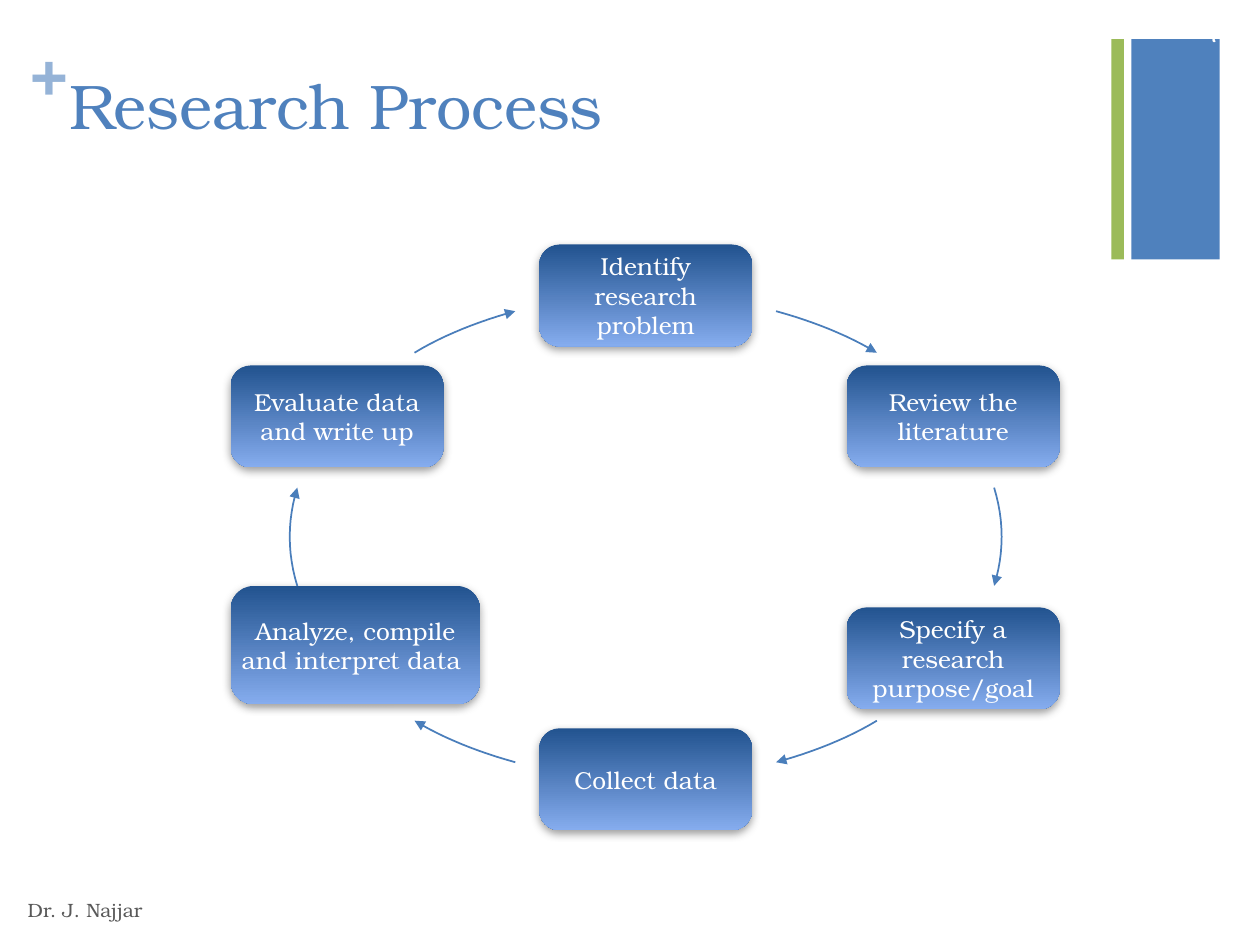
from lxml import etree
from pptx import Presentation
from pptx.dml.color import RGBColor
from pptx.enum import shapes, text
from pptx.oxml import ns
from pptx.util import Inches, Pt

COLORS = {"blue": "4F81BD", "light_blue": "95B3D7", "green": "9BBB59", "grey": "595959",
          "white": "FFFFFF", "box_top": "22538F", "box_bottom": "85ACEE",
          "arrow": "4A7EBB", "shadow": "808080"}
FONT = "TeX Gyre Bonum"
CENTER_X, CENTER_Y = 5.125, 4.26
CURVE_STEPS = 12


def rgb(name):
    return RGBColor.from_string(COLORS[name])


def write(shape, words, size, color, font=FONT, bold=False, align=text.PP_ALIGN.LEFT,
          anchor=text.MSO_ANCHOR.TOP, side_inset=0):
    frame = shape.text_frame
    frame.word_wrap = True
    frame.vertical_anchor = anchor
    frame.margin_left = frame.margin_right = Inches(side_inset)
    frame.margin_top = frame.margin_bottom = 0
    para = frame.paragraphs[0]
    para.alignment = align
    span = para.add_run()
    span.text = words
    span.font.name, span.font.size, span.font.bold = font, Pt(size), bold
    span.font.color.rgb = rgb(color)


deck = Presentation()
deck.slide_width, deck.slide_height = Inches(10), Inches(7.5)
page = deck.slides.add_slide(deck.slide_layouts[6])

# Corner bars
for left, width, color in [(8.98, 0.7, "blue"), (8.82, 0.1, "green")]:
    bar = page.shapes.add_shape(shapes.MSO_SHAPE.RECTANGLE, Inches(left), Inches(0.31),
                                Inches(width), Inches(1.75))
    bar.shadow.inherit = False
    bar.fill.solid()
    bar.fill.fore_color.rgb = rgb(color)
    bar.line.fill.background()

# Title, plus sign, author and page number
middle = text.MSO_ANCHOR.MIDDLE
labels = [
    ("+", (0.24, 0.25, 0.29, 0.58), dict(size=36, color="light_blue", bold=True)),
    ("Research Process", (0.55, 0.53, 8.26, 1.22), dict(size=36, color="blue")),
    ("Dr. J. Najjar", (0.22, 7.08, 6.7, 0.28), dict(size=11, color="grey", anchor=middle)),
    ("7", (9.08, 0.1, 0.61, 0.32), dict(size=14, color="white", font="Cambria",
                                        align=text.PP_ALIGN.RIGHT, anchor=middle)),
]
for words, place, style in labels:
    write(page.shapes.add_textbox(*map(Inches, place)), words, **style)

# Steps of the cycle, clockwise from the top
BOX = (1.69, 0.81)
steps = [
    ("Identify research problem", 4.28, 1.94, BOX),
    ("Review the literature", 6.72, 2.9, BOX),
    ("Specify a research purpose/goal", 6.72, 4.82, BOX),
    ("Collect data", 4.28, 5.78, BOX),
    ("Analyze, compile and interpret data ", 1.83, 4.65, (1.98, 0.94)),
    ("Evaluate data and write up", 1.83, 2.9, BOX),
]
# Cubic curves on the right side; the others are reflections of these
upper_curve = [(6.16, 2.47), (6.45, 2.55), (6.73, 2.66), (6.96, 2.8)]
side_curve = [(7.89, 3.87), (7.97, 4.13), (7.97, 4.39), (7.89, 4.65)]
# Curve, horizontal sign, vertical sign; a single reflection reverses direction
arrows = [(upper_curve, 1, 1), (side_curve, 1, 1), (upper_curve, 1, -1),
          (upper_curve, -1, -1), (side_curve, -1, -1), (upper_curve, -1, 1)]

for (words, left, top, size), (curve, sign_x, sign_y) in zip(steps, arrows):
    box = page.shapes.add_shape(shapes.MSO_SHAPE.ROUNDED_RECTANGLE, Inches(left), Inches(top),
                                *map(Inches, size))
    box.adjustments[0] = 0.2
    box.line.fill.background()
    box.fill.gradient()
    box.fill.gradient_angle = 270
    for stop, color, position in zip(box.fill.gradient_stops, ("box_top", "box_bottom"), (0, 1)):
        stop.color.rgb = rgb(color)
        stop.position = position
    box.shadow.inherit = False
    effects = box._element.spPr.find(ns.qn("a:effectLst"))
    shadow = etree.SubElement(effects, ns.qn("a:outerShdw"), blurRad=str(Pt(5)),
                              dist=str(Pt(2)), dir="5400000", rotWithShape="0")
    tint = etree.SubElement(shadow, ns.qn("a:srgbClr"), val=COLORS["shadow"])
    etree.SubElement(tint, ns.qn("a:alpha"), val="75000")
    write(box, words, 14, "white", align=text.PP_ALIGN.CENTER, anchor=middle, side_inset=0.02)

    points = [(CENTER_X + sign_x * (x - CENTER_X), CENTER_Y + sign_y * (y - CENTER_Y))
              for x, y in curve]
    if sign_x != sign_y:
        points.reverse()
    trace = []
    for step in range(CURVE_STEPS + 1):
        t = step / CURVE_STEPS
        weights = ((1 - t) ** 3, 3 * t * (1 - t) ** 2, 3 * t ** 2 * (1 - t), t ** 3)
        trace.append(tuple(Inches(sum(w * p[axis] for w, p in zip(weights, points)))
                           for axis in (0, 1)))
    builder = page.shapes.build_freeform(*trace[0])
    builder.add_line_segments(trace[1:], close=False)
    arrow = builder.convert_to_shape()
    arrow.shadow.inherit = False
    arrow.fill.background()
    arrow.line.color.rgb = rgb("arrow")
    arrow.line.width = Pt(1)
    etree.SubElement(arrow.line._get_or_add_ln(), ns.qn("a:tailEnd"), type="triangle")

deck.save("out.pptx")
